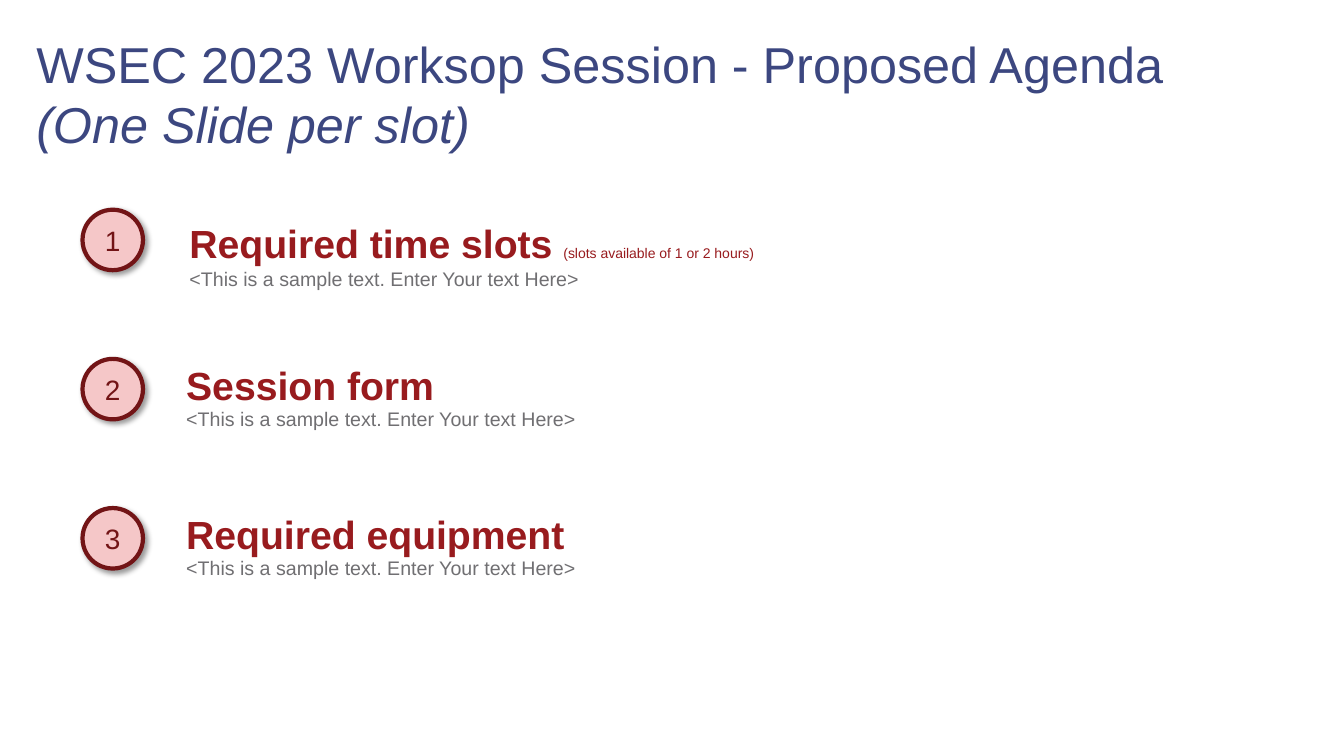
from lxml import etree
from pptx import Presentation
from pptx.dml.color import RGBColor
from pptx.enum import shapes, text
from pptx.oxml import ns
from pptx.util import Pt

NAVY = RGBColor(0x3C, 0x47, 0x80)
RED = RGBColor(0x98, 0x1B, 0x1E)
MAROON = RGBColor(0x72, 0x14, 0x16)
PINK = RGBColor(0xF5, 0xC7, 0xC8)
GRAY = RGBColor(0x70, 0x6F, 0x72)
FONT = "Arial"
HINT = "<This is a sample text. Enter Your text Here>"
PITCH = 106.56

# heading, note, left inset, top inset, line spacing
ITEMS = [
    ("Required time slots ", "(slots available of 1 or 2 hours)", 9.4, 7, 1.0),
    ("Session form", "", 7.2, 5.6, 0.9),
    ("Required equipment", "", 7.2, 5.6, 0.9),
]


def style(font, size, color, bold=False):
    font.name, font.size, font.bold = FONT, Pt(size), bold
    font.color.rgb = color


def add_run(para, words, size, color, bold=False):
    run = para.add_run()
    run.text = words
    style(run.font, size, color, bold)


def add_box(slide, x, y, w, h, left, top):
    frame = slide.shapes.add_textbox(Pt(x), Pt(y), Pt(w), Pt(h)).text_frame
    frame.word_wrap = True
    frame.margin_left = frame.margin_right = Pt(left)
    frame.margin_top = frame.margin_bottom = Pt(top)
    return frame


def add_shade(shape):
    """Soft shadow towards the lower right."""
    props = shape._element.spPr
    shape.shadow.inherit = False
    effects = props.find(ns.qn("a:effectLst"))
    outer = etree.SubElement(
        effects, ns.qn("a:outerShdw"), blurRad=str(Pt(4)), dist=str(Pt(3)),
        dir="2700000", algn="tl", rotWithShape="0")
    color = etree.SubElement(outer, ns.qn("a:srgbClr"), val="000000")
    etree.SubElement(color, ns.qn("a:alpha"), val="40000")


def add_title(slide, x, y, w, h):
    frame = add_box(slide, x, y, w, h, 9.4, 5)
    frame.vertical_anchor = text.MSO_ANCHOR.MIDDLE
    para = frame.paragraphs[0]
    style(para.font, 36, NAVY)
    para.add_run().text = "WSEC 2023 Worksop Session - Proposed Agenda"
    para.add_line_break()
    slot = para.add_run()
    slot.text = "(One Slide per slot)"
    slot.font.italic = True


def add_badge(slide, x, y, size, number):
    badge = slide.shapes.add_shape(
        shapes.MSO_SHAPE.OVAL, Pt(x), Pt(y), Pt(size), Pt(size))
    badge.fill.solid()
    badge.fill.fore_color.rgb = PINK
    badge.line.color.rgb = MAROON
    badge.line.width = Pt(3)
    add_shade(badge)
    frame = badge.text_frame
    frame.vertical_anchor = text.MSO_ANCHOR.MIDDLE
    para = frame.paragraphs[0]
    para.alignment = text.PP_ALIGN.CENTER
    style(para.font, 20, MAROON)
    para.add_run().text = str(number)


def add_item(slide, x, y, w, h, number, item):
    head, note, left, top, space = item
    add_badge(slide, x, y, 43.2, number)
    frame = add_box(slide, x + 67, y, w - 67, h, left, top)
    para = frame.paragraphs[0]
    para.line_spacing = space
    add_run(para, head, 28, RED, True)
    if note:
        add_run(para, note, 10, RED)
    para.add_line_break()
    add_run(para, HINT, 14, GRAY)


def main():
    deck = Presentation()
    deck.slide_width, deck.slide_height = Pt(960.48), Pt(540)
    slide = deck.slides.add_slide(deck.slide_layouts[6])
    add_title(slide, 16.5, 21.6, 865, 90)
    # Numbered agenda
    for i, item in enumerate(ITEMS):
        add_item(slide, 59, 149.8 + i * PITCH, 890, 90.7, i + 1, item)
    deck.save("out.pptx")


if __name__ == "__main__":
    main()
